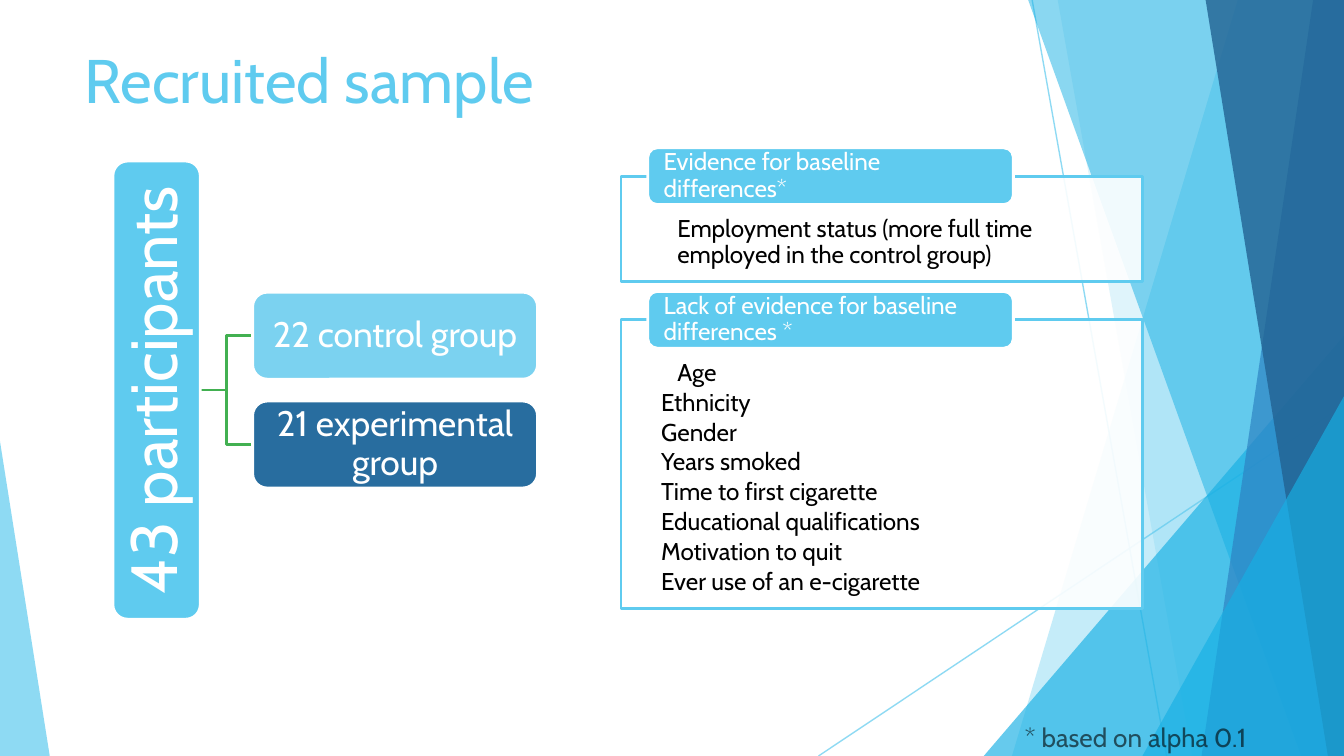
"""Build the slide on the recruited sample and its baseline differences."""
from dataclasses import dataclass

from lxml.etree import SubElement
from pptx import Presentation
from pptx.dml.color import RGBColor
from pptx.enum.shapes import MSO_CONNECTOR, MSO_SHAPE
from pptx.enum.text import MSO_ANCHOR, MSO_AUTO_SIZE, PP_ALIGN
from pptx.oxml.ns import qn
from pptx.util import Inches, Pt

TITLE = "Recruited sample"
PARTICIPANTS = "43 participants"
GROUPS = [("22 control group", "7BD2F0"), ("21 experimental group", "286D9F")]
FINDINGS = [
    ("Evidence for baseline differences*", 13.9,
     ["Employment status (more full time employed in the control group)"]),
    ("Lack of evidence for baseline differences *", 38.2,
     ["Age", "Ethnicity", "Gender", "Years smoked", "Time to first cigarette",
      "Educational qualifications", "Motivation to quit", "Ever use of an e-cigarette"]),
]
FOOTNOTE = "* based on alpha 0.1"


@dataclass(frozen=True)
class Theme:
    font: str = "Cabin"
    sky: str = "5FCBEF"
    cyan: str = "17B0E4"
    blue: str = "2E83C3"
    navy: str = "226292"
    green: str = "42B051"
    white: str = "FFFFFF"
    black: str = "000000"
    title_size: int = 33
    root_size: int = 35
    group_size: int = 19
    list_size: int = 13
    note_size: int = 14
    hairline: float = 0.75
    outline: float = 1.5


theme = Theme()

# Lengths below are percentages of the slide's width and height.
RAYS = [((76.8, 0), (86.8, 100)), ((100, 53.6), (60.9, 100))]
FACETS = [
    ("band", 92.1, 75.3, theme.sky, 36),
    ("band", 78.7, 88.7, theme.sky, 20),
    ("wedge", (73.2, 44.4, 26.8, 55.6), 1, theme.cyan, 66),
    ("band", 76.5, 96.8, theme.cyan, 50),
    ("band", 97.7, 89.4, theme.blue, 70),
    ("band", 89.7, 98.8, theme.navy, 80),
    ("wedge", (85, 52.4, 15, 47.6), 1, theme.cyan, 66),
    ("wedge", (0, 58.4, 3.7, 41.6), 0, theme.sky, 70),
]
TITLE_BOX = (5.3, 4.6, 89.4, 16.5)
ROOT_BOX = (8.4, 21.3, 6.5, 60.6)
GROUP_LEFT, GROUP_WIDTH, GROUP_HEIGHT, GROUP_GAP = 18.8, 21.2, 11.5, 2.9
PANEL_LEFT, PANEL_TOP, PANEL_WIDTH, PANEL_GAP = 46.2, 23.3, 38.8, 5.1
TAB_LEFT, TAB_WIDTH, TAB_HEIGHT = 48.2, 27.2, 7.5
NOTE_BOX = (69, 95, 31, 5)

prs = Presentation()
prs.slide_width, prs.slide_height = Inches(10.01), Inches(5.63)
slide = prs.slides.add_slide(prs.slide_layouts[3])
shapes = slide.shapes
heading, *lists = slide.placeholders


def point(x, y):
    return round(prs.slide_width * x / 100), round(prs.slide_height * y / 100)


def place(x, y, width, height):
    return point(x, y) + point(width, height)


def move(part, box):
    part.left, part.top, part.width, part.height = place(*box)


def fade(part, percent):
    for colour in part._element.iter(qn("a:srgbClr")):
        SubElement(colour, qn("a:alpha")).set("val", str(percent * 1000))


def paint(part, colour, outline=None, opacity=100):
    part.fill.solid()
    part.fill.fore_color.rgb = RGBColor.from_string(colour)
    if opacity < 100:
        fade(part, opacity)
    if outline:
        part.line.color.rgb = RGBColor.from_string(outline)
        part.line.width = Pt(theme.outline)
    else:
        part.line.fill.background()


def write(part, lines, size, colour, align=PP_ALIGN.LEFT, anchor=MSO_ANCHOR.MIDDLE,
          insets=(0.1, 0.05, 0.1, 0.05), spacing=0.9, after=0):
    frame = part.text_frame
    frame.text = "\n".join(lines)
    frame.word_wrap, frame.auto_size, frame.vertical_anchor = True, MSO_AUTO_SIZE.NONE, anchor
    (frame.margin_left, frame.margin_top,
     frame.margin_right, frame.margin_bottom) = map(Inches, insets)
    for paragraph in frame.paragraphs:
        paragraph.alignment, paragraph.line_spacing = align, spacing
        paragraph.space_before, paragraph.space_after = Pt(0), Pt(after)
        for run in paragraph.runs:
            run.font.name, run.font.size = theme.font, Pt(size)
            run.font.color.rgb = RGBColor.from_string(colour)


def connect(kind, start, end, colour, width):
    link = shapes.add_connector(kind, *point(*start), *point(*end))
    link.line.color.rgb = RGBColor.from_string(colour)
    link.line.width = Pt(width)
    SubElement(link._element.spPr, qn("a:effectLst"))
    return link


def card(box, colour):
    part = shapes.add_shape(MSO_SHAPE.ROUNDED_RECTANGLE, *place(*box))
    part.shadow.inherit = False
    paint(part, colour, theme.white)
    return part


def draw_backdrop():
    for start, end in RAYS:
        fade(connect(MSO_CONNECTOR.STRAIGHT, start, end, theme.sky, theme.hairline), 70)
    for kind, where, lean, colour, opacity in FACETS:
        if kind == "band":
            outline = shapes.build_freeform(*point(where, 0), scale=1.0)
            corners = [point(100, 0), point(100, 100), point(lean, 100)]
            outline.add_line_segments(corners, close=True)
            facet = outline.convert_to_shape()
        else:
            facet = shapes.add_shape(MSO_SHAPE.ISOSCELES_TRIANGLE, *place(*where))
            facet.adjustments[0] = lean
        facet.shadow.inherit = False
        paint(facet, colour, opacity=opacity)


def draw_groups():
    left, top, width, height = ROOT_BOX
    middle = top + height / 2
    pitch = GROUP_HEIGHT + GROUP_GAP
    centres = [middle + (i - (len(GROUPS) - 1) / 2) * pitch for i in range(len(GROUPS))]
    for centre in centres:
        connect(MSO_CONNECTOR.ELBOW, (left + width, middle), (GROUP_LEFT, centre),
                theme.green, theme.outline)
    root = card(ROOT_BOX, theme.sky)
    x, y, across, down = place(*ROOT_BOX)
    root.left, root.top = x + (across - down) // 2, y + (down - across) // 2
    root.width, root.height, root.rotation = down, across, 270
    write(root, [PARTICIPANTS], theme.root_size, theme.white, PP_ALIGN.CENTER, insets=(0.02,) * 4)
    for (label, colour), centre in zip(GROUPS, centres):
        box = (GROUP_LEFT, centre - GROUP_HEIGHT / 2, GROUP_WIDTH, GROUP_HEIGHT)
        write(card(box, colour), [label], theme.group_size, theme.white,
              PP_ALIGN.CENTER, insets=(0.01,) * 4)


def draw_findings():
    top = PANEL_TOP
    for panel, (label, height, items) in zip(lists, FINDINGS):
        shapes.element.append(panel._element)
        move(panel, (PANEL_LEFT, top, PANEL_WIDTH, height))
        paint(panel, theme.white, theme.sky, 90)
        write(panel, items, theme.list_size, theme.black, anchor=MSO_ANCHOR.TOP,
              insets=(0.3, 0.3, 0.3, 0.1), after=2)
        for i, paragraph in enumerate(panel.text_frame.paragraphs):
            properties = paragraph._p.get_or_add_pPr()
            properties.set("marL", str(Inches(0.12)))
            properties.set("indent", str(Inches(-0.12 if i else 0)))
            SubElement(properties, qn("a:buNone"))
        tab = card((TAB_LEFT, top - TAB_HEIGHT / 2, TAB_WIDTH, TAB_HEIGHT), theme.sky)
        write(tab, [label], theme.list_size, theme.white, insets=(0.1, 0, 0.1, 0))
        top += height + PANEL_GAP


draw_backdrop()
shapes.element.append(heading._element)
move(heading, TITLE_BOX)
write(heading, [TITLE], theme.title_size, theme.sky, anchor=MSO_ANCHOR.TOP, spacing=1.0)
draw_groups()
draw_findings()
footnote = shapes.add_textbox(*place(*NOTE_BOX))
write(footnote, [FOOTNOTE], theme.note_size, theme.black, PP_ALIGN.CENTER, MSO_ANCHOR.TOP)
fade(footnote, 60)
prs.save("out.pptx")
